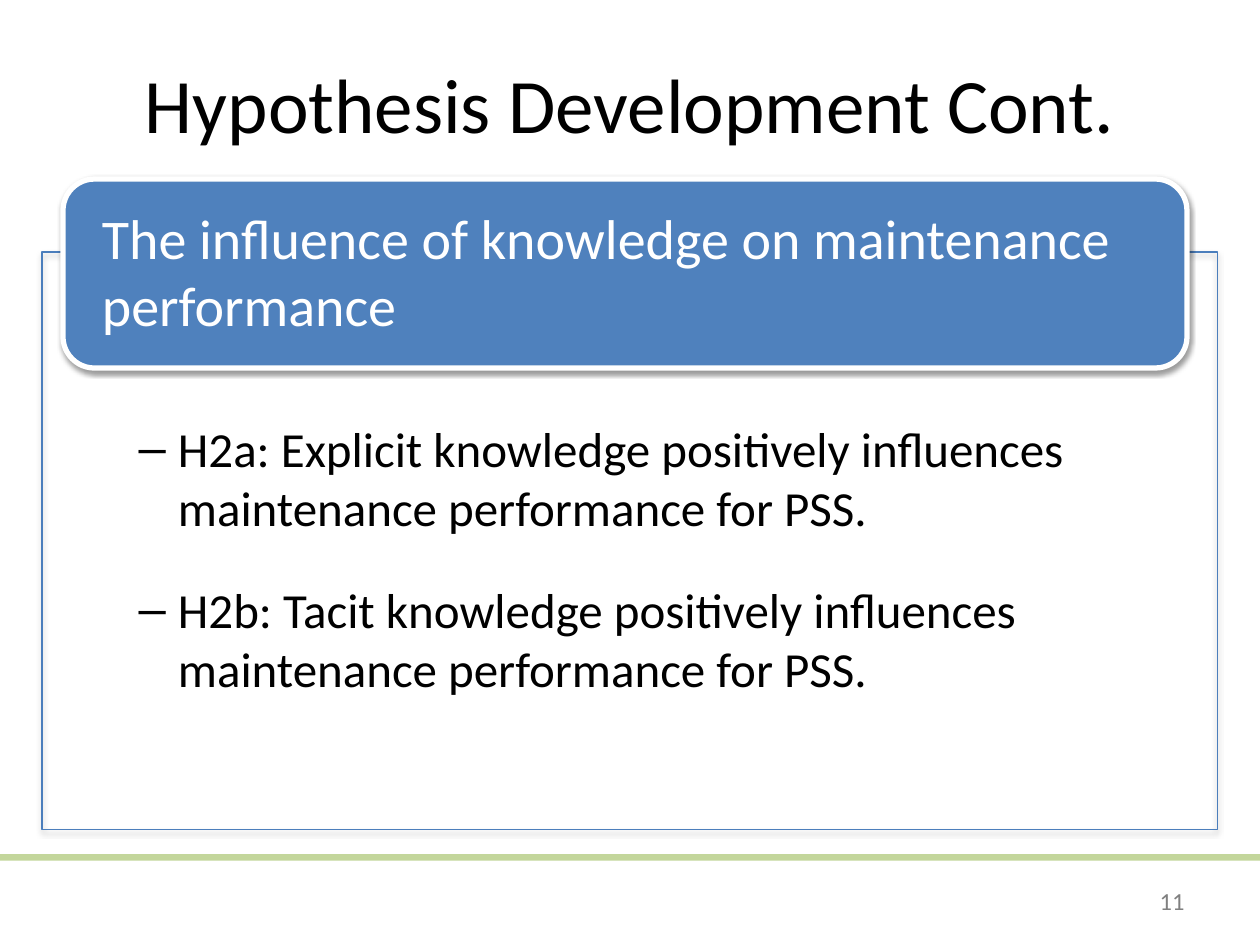
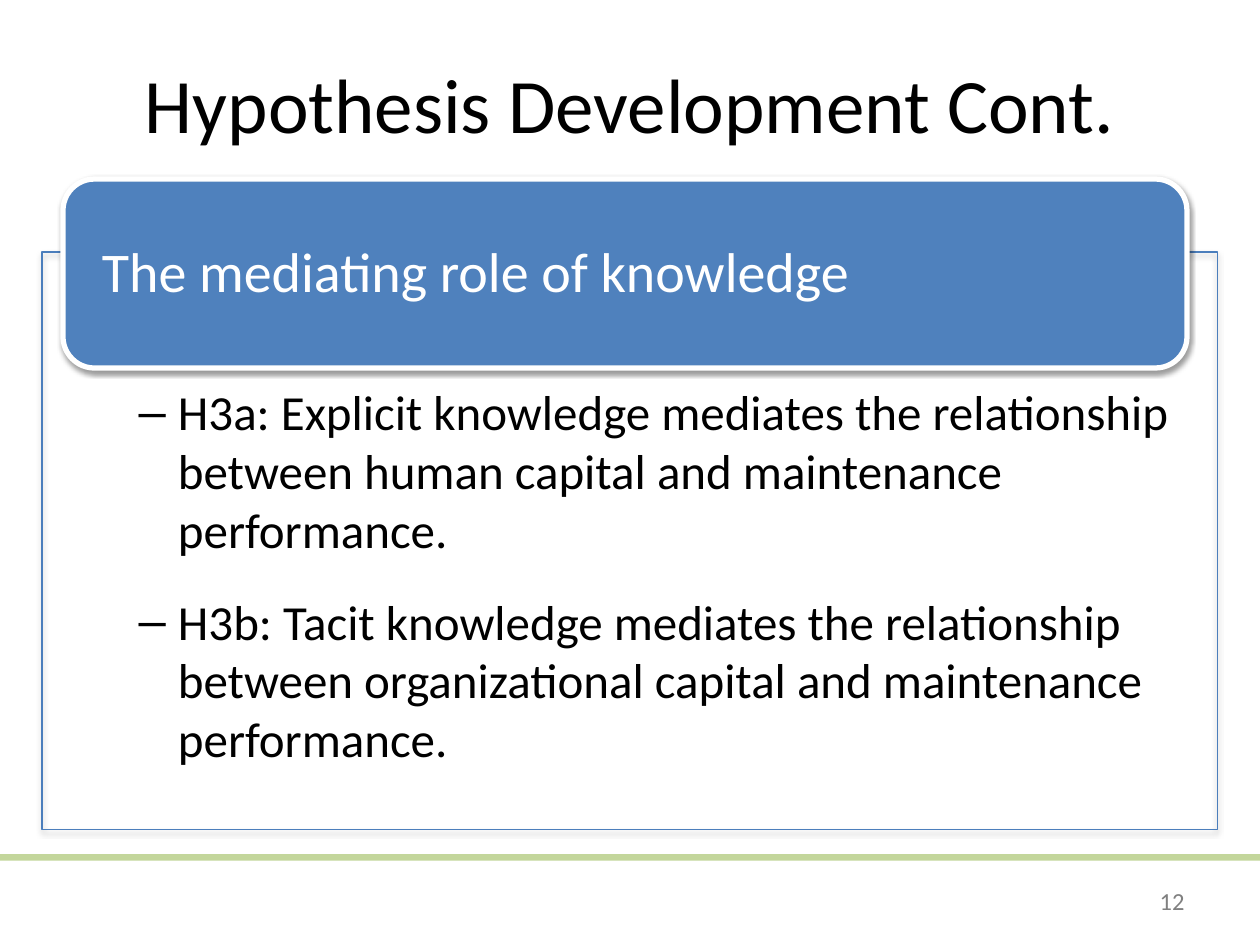
from lxml import etree
from pptx import Presentation
from pptx.dml.color import RGBColor
from pptx.enum.shapes import MSO_SHAPE as Shape
from pptx.enum.text import MSO_ANCHOR as Anchor, MSO_AUTO_SIZE as AutoSize, PP_ALIGN as Align
from pptx.oxml.ns import qn
from pptx.util import Cm, Pt

BLACK = RGBColor(0x00, 0x00, 0x00)
WHITE = RGBColor(0xFF, 0xFF, 0xFF)
GREY = RGBColor(0x80, 0x80, 0x80)
BLUE = RGBColor(0x4F, 0x81, 0xBD)
FRAME_BLUE = RGBColor(0x4B, 0x7E, 0xBC)
GREEN = RGBColor(0xC3, 0xD6, 0x9B)

TITLE = "Hypothesis Development Cont."
TITLE_FONT = {"name": "Calibri", "size": Pt(44)}
HEADING_FONT = {"name": "Calibri", "size": Pt(32)}
HYPOTHESIS_FONT = {"name": "Calibri", "size": Pt(28)}
NUMBER_FONT = {"name": "Calibri", "size": Pt(14)}

LEFT, WIDTH = Cm(1.27), Cm(22.86)
BODY_BOTTOM = Cm(17.4)

SECTIONS = [
    {
        "number": 11,
        "heading": "The influence of knowledge on maintenance performance",
        "body_top": Cm(8.31),
        "gap": Pt(24.7),
        "hypotheses": [
            "H2a: Explicit knowledge positively influences maintenance performance for PSS.",
            "H2b: Tacit knowledge positively influences maintenance performance for PSS.",
        ],
    },
    {
        "number": 12,
        "heading": "The mediating role of knowledge",
        "body_top": Cm(7.57),
        "gap": Pt(18.7),
        "hypotheses": [
            "H3a: Explicit knowledge mediates the relationship between human capital "
            "and maintenance performance.",
            "H3b: Tacit knowledge mediates the relationship between organizational capital "
            "and maintenance performance.",
        ],
    },
]


def format_text(paragraph, text, font, color, align=Align.LEFT):
    paragraph.text = text
    paragraph.alignment = align
    for name, value in font.items():
        setattr(paragraph.font, name, value)
    paragraph.font.color.rgb = color


def add_shadow(shape, distance, opacity):
    """Give the shape a soft black shadow that falls straight down."""
    shape.shadow.inherit = False
    effects = shape._element.spPr.find(qn("a:effectLst"))
    shadow = etree.SubElement(
        effects, qn("a:outerShdw"), blurRad=str(Pt(3.1)), dist=str(Pt(distance)),
        dir="5400000", rotWithShape="0")
    color = etree.SubElement(shadow, qn("a:srgbClr"), val="000000")
    etree.SubElement(color, qn("a:alpha"), val=str(opacity * 1000))


presentation = Presentation()
presentation.slide_width = Cm(25.4)
presentation.slide_height = Cm(19.05)

for section in SECTIONS:
    slide = presentation.slides.add_slide(presentation.slide_layouts[1])

    footer_rule = slide.shapes.add_shape(
        Shape.RECTANGLE, 0, Cm(17.22), presentation.slide_width, Cm(0.13))
    footer_rule.shadow.inherit = False
    footer_rule.fill.solid()
    footer_rule.fill.fore_color.rgb = GREEN
    footer_rule.line.fill.background()

    title = slide.shapes.title
    title.left, title.top, title.width, title.height = LEFT, Cm(0.76), WIDTH, Cm(2.62)
    format_text(title.text_frame.paragraphs[0], TITLE, TITLE_FONT, BLACK, Align.CENTER)

    body = slide.placeholders[1]
    body.left, body.top, body.width = LEFT, section["body_top"], WIDTH
    body.height = BODY_BOTTOM - section["body_top"]
    body_frame = body.text_frame
    body_frame.auto_size = AutoSize.NONE
    for index, hypothesis in enumerate(section["hypotheses"]):
        paragraph = body_frame.add_paragraph() if index else body_frame.paragraphs[0]
        paragraph.level = 1
        paragraph.space_before = section["gap"] if index else Pt(0)
        format_text(paragraph, hypothesis, HYPOTHESIS_FONT, BLACK)

    number_box = slide.shapes.add_textbox(Cm(18.2), Cm(17.66), Cm(5.93), Cm(1.01))
    number_frame = number_box.text_frame
    number_frame.word_wrap = True
    number_frame.vertical_anchor = Anchor.MIDDLE
    format_text(number_frame.paragraphs[0], str(section["number"]), NUMBER_FONT, GREY,
                Align.RIGHT)

    frame = slide.shapes.add_shape(
        Shape.RECTANGLE, Cm(0.85), Cm(5.08), Cm(23.7), Cm(11.64))
    frame.fill.background()
    frame.line.color.rgb = FRAME_BLUE
    frame.line.width = Pt(0.75)
    add_shadow(frame, distance=1.8, opacity=35)

    heading = slide.shapes.add_shape(
        Shape.ROUNDED_RECTANGLE, LEFT, Cm(3.61), Cm(22.66), Cm(3.81))
    heading.fill.solid()
    heading.fill.fore_color.rgb = BLUE
    heading.line.color.rgb = WHITE
    heading.line.width = Pt(3)
    add_shadow(heading, distance=1.6, opacity=38)
    heading_frame = heading.text_frame
    heading_format = {
        "word_wrap": True, "vertical_anchor": Anchor.MIDDLE,
        "margin_left": Cm(0.6), "margin_right": Cm(0.6),
        "margin_top": 0, "margin_bottom": Cm(0.13),
    }
    for name, value in heading_format.items():
        setattr(heading_frame, name, value)
    format_text(heading_frame.paragraphs[0], section["heading"], HEADING_FONT, WHITE)

presentation.save("out.pptx")
